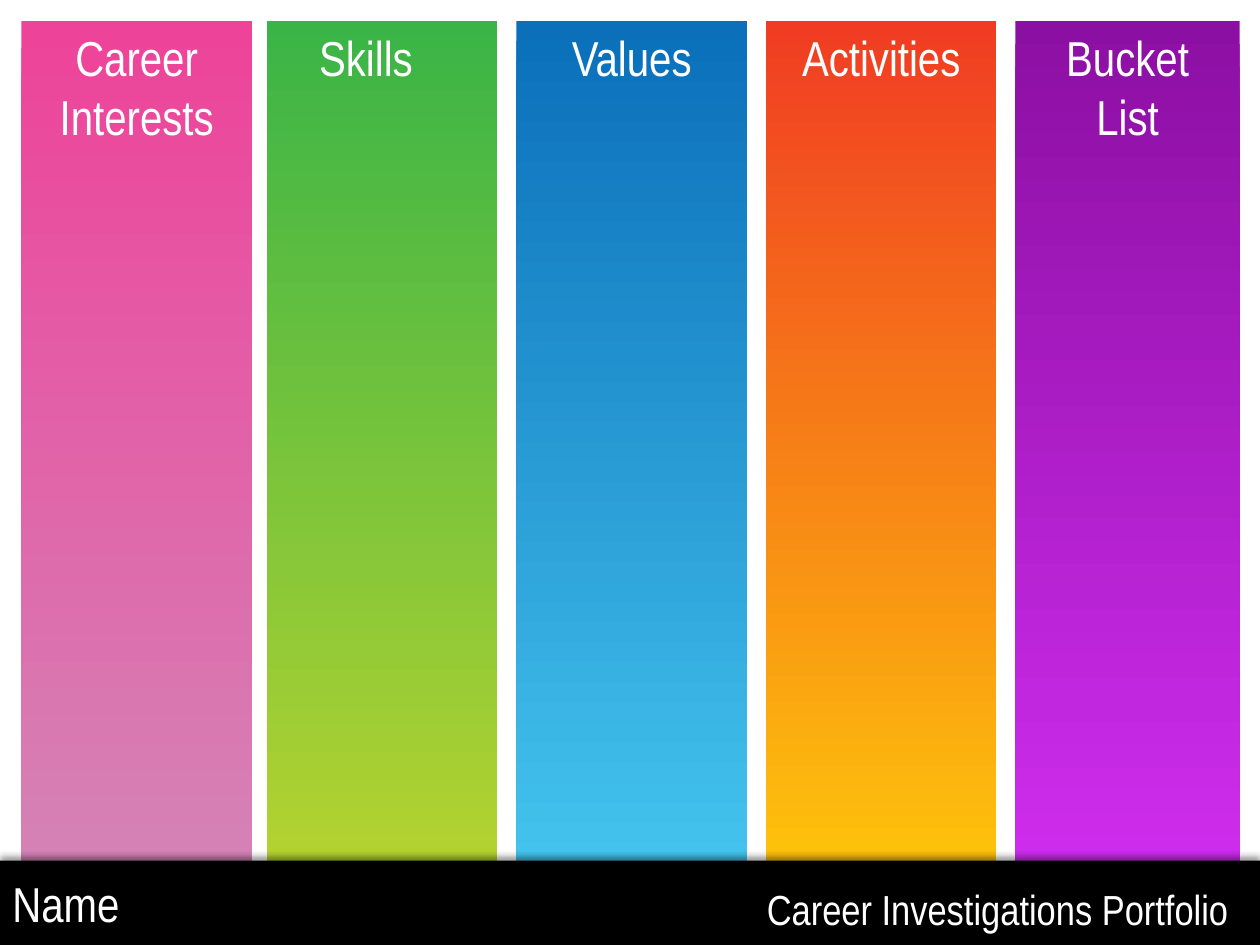
from typing import NamedTuple

from lxml import etree
from pptx import Presentation
from pptx.dml.color import RGBColor
from pptx.enum.shapes import MSO_SHAPE
from pptx.enum.text import MSO_ANCHOR, MSO_AUTO_SIZE, PP_ALIGN
from pptx.oxml.ns import qn
from pptx.util import Cm, Pt

RECT = MSO_SHAPE.RECTANGLE
TOP, MIDDLE = MSO_ANCHOR.TOP, MSO_ANCHOR.MIDDLE
LEFT, CENTER, RIGHT = PP_ALIGN.LEFT, PP_ALIGN.CENTER, PP_ALIGN.RIGHT
FIT = MSO_AUTO_SIZE.SHAPE_TO_FIT_TEXT
FONT = "Arial Narrow"
WHITE, BLACK = "FFFFFF", "000000"


class Column(NamedTuple):
    title: str
    left: float
    width: float
    start: str
    end: str


class Label(NamedTuple):
    text: str
    left: float
    top: float
    width: float
    height: float
    size: int
    align: PP_ALIGN


COLUMNS = [
    Column("Career\nInterests", 0.43, 4.65, "ED4399", "D485B8"),
    Column("Skills\t", 5.38, 4.65, "3AB447", "B9D42F"),
    Column("Values", 10.41, 4.65, "0B6FBA", "46C7F0"),
    Column("Activities", 15.44, 4.65, "F03C23", "FEC80A"),
    Column("Bucket\nList", 20.47, 4.52, "8C0FA3", "D12EF0"),
]
LABELS = [
    Label("Name", 0, 17.48, 12.5, 1.45, 28, LEFT),
    Label("Career Investigations Portfolio", 13.33, 17.68, 11.68, 1.27, 24, RIGHT),
]


def color(code: str) -> RGBColor:
    return RGBColor.from_string(code)


def write(frame, text: str, size: int, align: PP_ALIGN, anchor: MSO_ANCHOR) -> None:
    frame.word_wrap = True
    frame.vertical_anchor = anchor
    frame.text = text
    for para in frame.paragraphs:
        para.alignment = align
        para.font.name = FONT
        para.font.size = Pt(size)
        para.font.color.rgb = color(WHITE)


def add_rect(slide, left: float, top: float, width: float, height: float):
    """Add a rectangle with no line and no shadow; lengths in cm."""
    rect = slide.shapes.add_shape(RECT, Cm(left), Cm(top), Cm(width), Cm(height))
    rect.shadow.inherit = False
    rect.line.fill.background()
    return rect


def add_column(slide, col: Column) -> None:
    rect = add_rect(slide, col.left, 0.43, col.width, 17.78)
    rect.fill.gradient()
    rect.fill.gradient_angle = 270
    for stop, code in zip(rect.fill.gradient_stops, (col.start, col.end)):
        stop.color.rgb = color(code)
    write(rect.text_frame, col.title, 28, CENTER, TOP)


def add_footer(slide) -> None:
    """Add the black bar, which casts a soft shadow upwards."""
    bar = add_rect(slide, 0, 17.35, 25.4, 1.7)
    bar.fill.solid()
    bar.fill.fore_color.rgb = color(BLACK)
    effects = bar.element.spPr.find(qn("a:effectLst"))
    shade = etree.SubElement(
        effects, qn("a:outerShdw"), blurRad=str(Pt(4)), dist=str(Pt(3)),
        dir=str(270 * 60000), rotWithShape="0")
    tint = etree.SubElement(shade, qn("a:srgbClr"), val=BLACK)
    etree.SubElement(tint, qn("a:alpha"), val="40000")


def add_label(slide, label: Label) -> None:
    box = slide.shapes.add_textbox(
        Cm(label.left), Cm(label.top), Cm(label.width), Cm(label.height))
    write(box.text_frame, label.text, label.size, label.align, MIDDLE)
    box.text_frame.auto_size = FIT


def main() -> None:
    deck = Presentation()
    deck.slide_width, deck.slide_height = Cm(25.4), Cm(19.05)
    slide = deck.slides.add_slide(deck.slide_layouts[6])
    for col in COLUMNS:
        add_column(slide, col)
    add_footer(slide)
    for label in LABELS:
        add_label(slide, label)
    deck.save("out.pptx")


if __name__ == "__main__":
    main()
